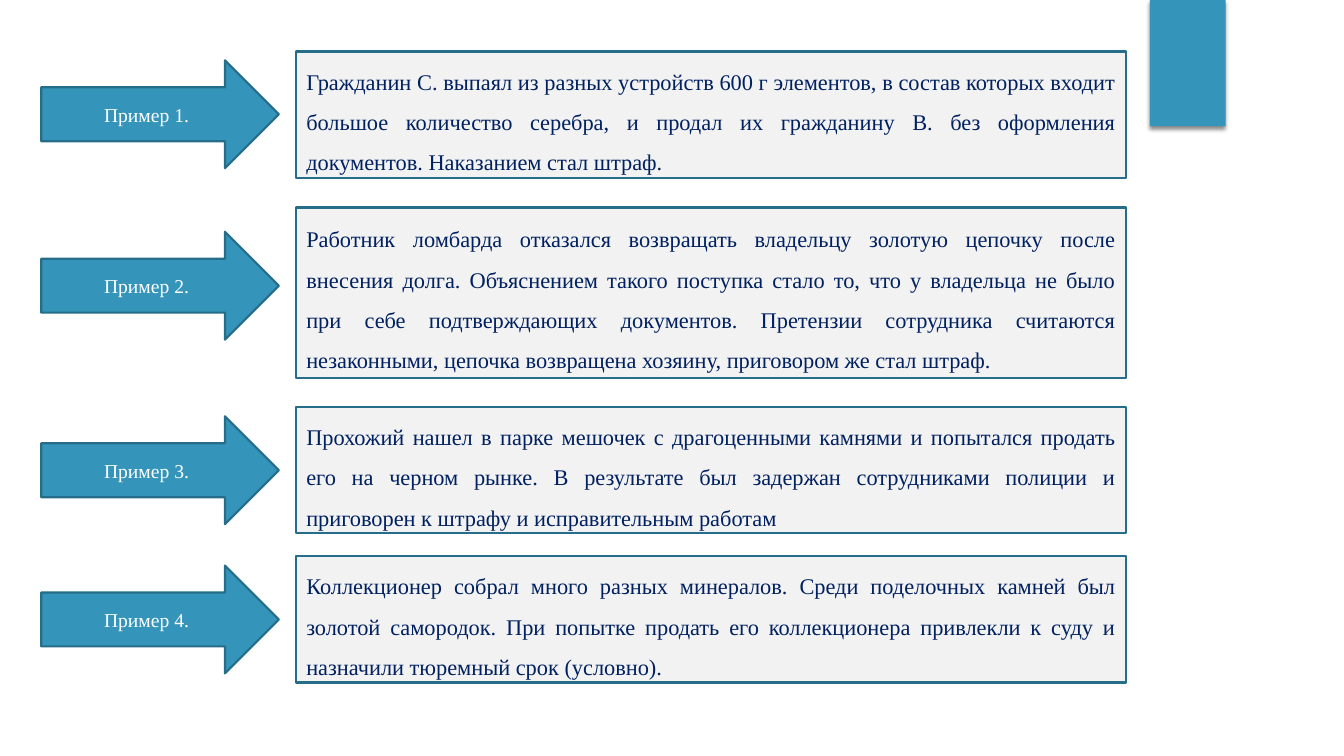
"""Build a slide of four numbered court cases, each with an arrow and a text panel."""
from dataclasses import dataclass

from lxml import etree
from pptx import Presentation
from pptx.dml.color import RGBColor
from pptx.enum.shapes import MSO_SHAPE
from pptx.enum.text import MSO_ANCHOR, PP_ALIGN
from pptx.oxml.ns import qn
from pptx.shapes.autoshape import Shape
from pptx.slide import Slide
from pptx.util import Cm, Pt

RECTANGLE = MSO_SHAPE.RECTANGLE
RIGHT_ARROW = MSO_SHAPE.RIGHT_ARROW
MIDDLE = MSO_ANCHOR.MIDDLE
CENTER = PP_ALIGN.CENTER
JUSTIFY = PP_ALIGN.JUSTIFY

FONT = "Times New Roman"
BLUE = "3494BA"
DARK_BLUE = "266D8A"
NAVY = "002060"
PALE_GRAY = "F2F2F2"
WHITE = "FFFFFF"

ARROW_LEFT, ARROW_WIDTH, ARROW_HEIGHT = 1.04, 5.99, 2.72
PANEL_LEFT, PANEL_WIDTH = 7.47, 20.9


@dataclass(frozen=True)
class Case:
    arrow_top: float
    panel_top: float
    panel_height: float
    story: str


@dataclass(frozen=True)
class Style:
    fill: str
    text_color: str
    size: int
    alignment: PP_ALIGN
    line_spacing: float


ARROW_STYLE = Style(BLUE, WHITE, 14, CENTER, 1.0)
PANEL_STYLE = Style(PALE_GRAY, NAVY, 16, JUSTIFY, 1.5)

CASES = [
    Case(1.52, 1.3, 3.18,
         "Гражданин С. выпаял из разных устройств 600 г элементов, в состав "
         "которых входит большое количество серебра, и продал их гражданину В. "
         "без оформления документов. Наказанием стал штраф."),
    Case(5.84, 5.23, 4.29,
         "Работник ломбарда отказался возвращать владельцу золотую цепочку после "
         "внесения долга. Объяснением такого поступка стало то, что у владельца "
         "не было при себе подтверждающих документов. Претензии сотрудника "
         "считаются незаконными, цепочка возвращена хозяину, приговором же стал "
         "штраф."),
    Case(10.49, 10.26, 3.18,
         "Прохожий нашел в парке мешочек с драгоценными камнями и попытался "
         "продать его на черном рынке. В результате был задержан сотрудниками "
         "полиции и приговорен к штрафу и исправительным работам"),
    Case(14.25, 14.02, 3.18,
         "Коллекционер собрал много разных минералов. Среди поделочных камней "
         "был золотой самородок. При попытке продать его коллекционера привлекли "
         "к суду и назначили тюремный срок (условно)."),
]


def color(value: str) -> RGBColor:
    return RGBColor.from_string(value)


def add_block(slide: Slide, kind: MSO_SHAPE, left: float, top: float,
              width: float, height: float, fill: str) -> Shape:
    block = slide.shapes.add_shape(kind, Cm(left), Cm(top), Cm(width), Cm(height))
    block.shadow.inherit = False
    block.fill.solid()
    block.fill.fore_color.rgb = color(fill)
    return block


def add_label(block: Shape, text: str, style: Style) -> None:
    block.line.color.rgb = color(DARK_BLUE)
    block.line.width = Pt(1.5)
    frame = block.text_frame
    frame.word_wrap = True
    frame.vertical_anchor = MIDDLE
    frame.text = text
    paragraph = frame.paragraphs[0]
    paragraph.alignment = style.alignment
    paragraph.line_spacing = style.line_spacing
    font = paragraph.runs[0].font
    font.name = FONT
    font.size = Pt(style.size)
    font.color.rgb = color(style.text_color)


def add_corner_tab(slide: Slide) -> None:
    tab = add_block(slide, RECTANGLE, 28.98, 0, 1.91, 3.18, BLUE)
    tab.line.fill.background()
    effects = tab.element.spPr.find(qn("a:effectLst"))
    shadow = etree.SubElement(effects, qn("a:outerShdw"), blurRad=str(Pt(3)),
                              dist=str(Pt(2)), dir="5400000", rotWithShape="0")
    shade = etree.SubElement(shadow, qn("a:srgbClr"), val="000000")
    etree.SubElement(shade, qn("a:alpha"), val="45000")


def add_case(slide: Slide, number: int, case: Case) -> None:
    arrow = add_block(slide, RIGHT_ARROW, ARROW_LEFT, case.arrow_top,
                      ARROW_WIDTH, ARROW_HEIGHT, ARROW_STYLE.fill)
    add_label(arrow, f"Пример {number}.", ARROW_STYLE)
    panel = add_block(slide, RECTANGLE, PANEL_LEFT, case.panel_top,
                      PANEL_WIDTH, case.panel_height, PANEL_STYLE.fill)
    add_label(panel, case.story, PANEL_STYLE)


def main() -> None:
    presentation = Presentation()
    presentation.slide_width = Cm(33.87)
    presentation.slide_height = Cm(19.05)
    slide = presentation.slides.add_slide(presentation.slide_layouts[6])
    add_corner_tab(slide)
    for number, case in enumerate(CASES, start=1):
        add_case(slide, number, case)
    presentation.save("out.pptx")


if __name__ == "__main__":
    main()
